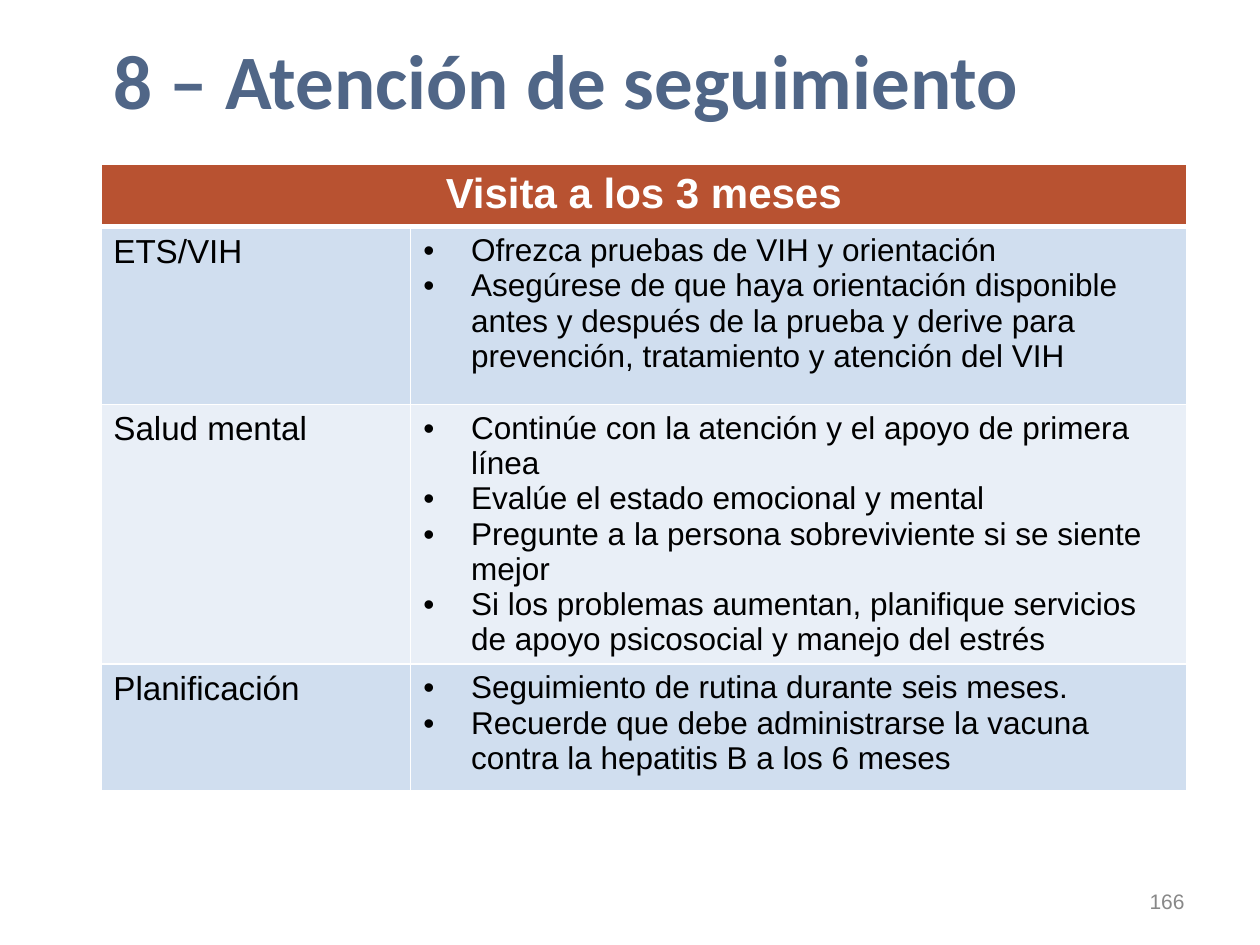
from dataclasses import dataclass

from lxml import etree
from pptx import Presentation
from pptx.dml.color import RGBColor
from pptx.enum.text import MSO_ANCHOR, MSO_AUTO_SIZE, PP_ALIGN
from pptx.oxml.ns import qn
from pptx.util import Inches, Pt

LEFT, CENTER, RIGHT = PP_ALIGN.LEFT, PP_ALIGN.CENTER, PP_ALIGN.RIGHT
MIDDLE = MSO_ANCHOR.MIDDLE
NO_FIT = MSO_AUTO_SIZE.NONE
COLORS = {
    "title": "506687",
    "head": "B85231",
    "dark": "D0DEEF",
    "light": "E9EFF7",
    "white": "FFFFFF",
    "black": "000000",
    "gray": "888888",
}
WIDTHS = (2.46, 6.16)
HEAD_HEIGHT = 0.5
INDENT = Inches(0.38)


@dataclass
class Topic:
    name: str
    height: float
    points: tuple[str, ...]


TOPICS = (
    Topic("ETS/VIH", 1.41, (
        "Ofrezca pruebas de VIH y orientación",
        "Asegúrese de que haya orientación disponible antes y después de la "
        "prueba y derive para prevención, tratamiento y atención del VIH",
    )),
    Topic("Salud mental", 1.73, (
        "Continúe con la atención y el apoyo de primera línea",
        "Evalúe el estado emocional y mental",
        "Pregunte a la persona sobreviviente si se siente mejor",
        "Si los problemas aumentan, planifique servicios de apoyo "
        "psicosocial y manejo del estrés",
    )),
    Topic("Planificación", 1.01, (
        "Seguimiento de rutina durante seis meses.",
        "Recuerde que debe administrarse la vacuna contra la hepatitis B "
        "a los 6 meses",
    )),
)


def set_font(para, size: float, color: str, bold: bool = False,
             face: str = "Arial") -> None:
    font = para.font
    font.name, font.size, font.bold = face, Pt(size), bold
    font.color.rgb = RGBColor.from_string(COLORS[color])


def add_bullet(para) -> None:
    props = para._p.get_or_add_pPr()
    props.set("marL", str(INDENT))
    props.set("indent", str(-INDENT))
    tint = etree.SubElement(props, qn("a:buClr"))
    etree.SubElement(tint, qn("a:srgbClr"), val=COLORS["black"])
    etree.SubElement(props, qn("a:buFont"), typeface="Arial")
    etree.SubElement(props, qn("a:buChar"), char="•")


def style_cell(cell, fill: str, top: float = 1, bottom: float = 1) -> None:
    props = cell._tc.get_or_add_tcPr()
    for side, width in (("L", 1), ("R", 1), ("T", top), ("B", bottom)):
        line = etree.SubElement(props, qn(f"a:ln{side}"), w=str(Pt(width)))
        paint = etree.SubElement(line, qn("a:solidFill"))
        etree.SubElement(paint, qn("a:srgbClr"), val=COLORS["white"])
    cell.fill.solid()
    cell.fill.fore_color.rgb = RGBColor.from_string(COLORS[fill])


def add_title(slide) -> None:
    title = slide.shapes.title
    title.left, title.top = Inches(0.8), Inches(0.05)
    title.width, title.height = Inches(9), Inches(1.25)
    frame = title.text_frame
    frame.text = "8 – Atención de seguimiento"
    frame.word_wrap, frame.auto_size = True, NO_FIT
    frame.vertical_anchor = MIDDLE
    para = frame.paragraphs[0]
    para.alignment, para.line_spacing = LEFT, 0.9
    set_font(para, 44, "title", True, "Calibri")


def add_visit(slide) -> None:
    heights = [HEAD_HEIGHT] + [topic.height for topic in TOPICS]
    table = slide.shapes.add_table(
        len(heights), len(WIDTHS), Inches(0.8), Inches(1.3),
        Inches(sum(WIDTHS)), Inches(sum(heights))).table
    for column, width in zip(table.columns, WIDTHS):
        column.width = Inches(width)
    for row, height in zip(table.rows, heights):
        row.height = Inches(height)

    for cell in table.rows[0].cells:
        style_cell(cell, "head", bottom=3)
    head = table.cell(0, 0)
    head.merge(table.cell(0, 1))
    head.text = "Visita a los 3 meses"
    para = head.text_frame.paragraphs[0]
    para.alignment = CENTER
    set_font(para, 24, "white", True)

    for index, topic in enumerate(TOPICS, 1):
        label, body = table.rows[index].cells
        for cell in (label, body):
            style_cell(cell, "dark" if index % 2 else "light",
                       top=3 if index == 1 else 1)
        label.text = topic.name
        set_font(label.text_frame.paragraphs[0], 19, "black")
        body.text = "\n".join(topic.points)
        for para in body.text_frame.paragraphs:
            add_bullet(para)
            set_font(para, 18, "black")


def add_number(slide) -> None:
    box = slide.shapes.add_textbox(
        Inches(7.17), Inches(6.95), Inches(2.33), Inches(0.4))
    frame = box.text_frame
    frame.text = "166"
    frame.word_wrap = True
    frame.vertical_anchor = MIDDLE
    para = frame.paragraphs[0]
    para.alignment = RIGHT
    set_font(para, 12, "gray")


def main() -> None:
    deck = Presentation()
    deck.slide_width, deck.slide_height = Inches(10), Inches(7.5)
    slide = deck.slides.add_slide(deck.slide_layouts[5])
    add_visit(slide)
    add_number(slide)
    add_title(slide)
    deck.save("out.pptx")


if __name__ == "__main__":
    main()
